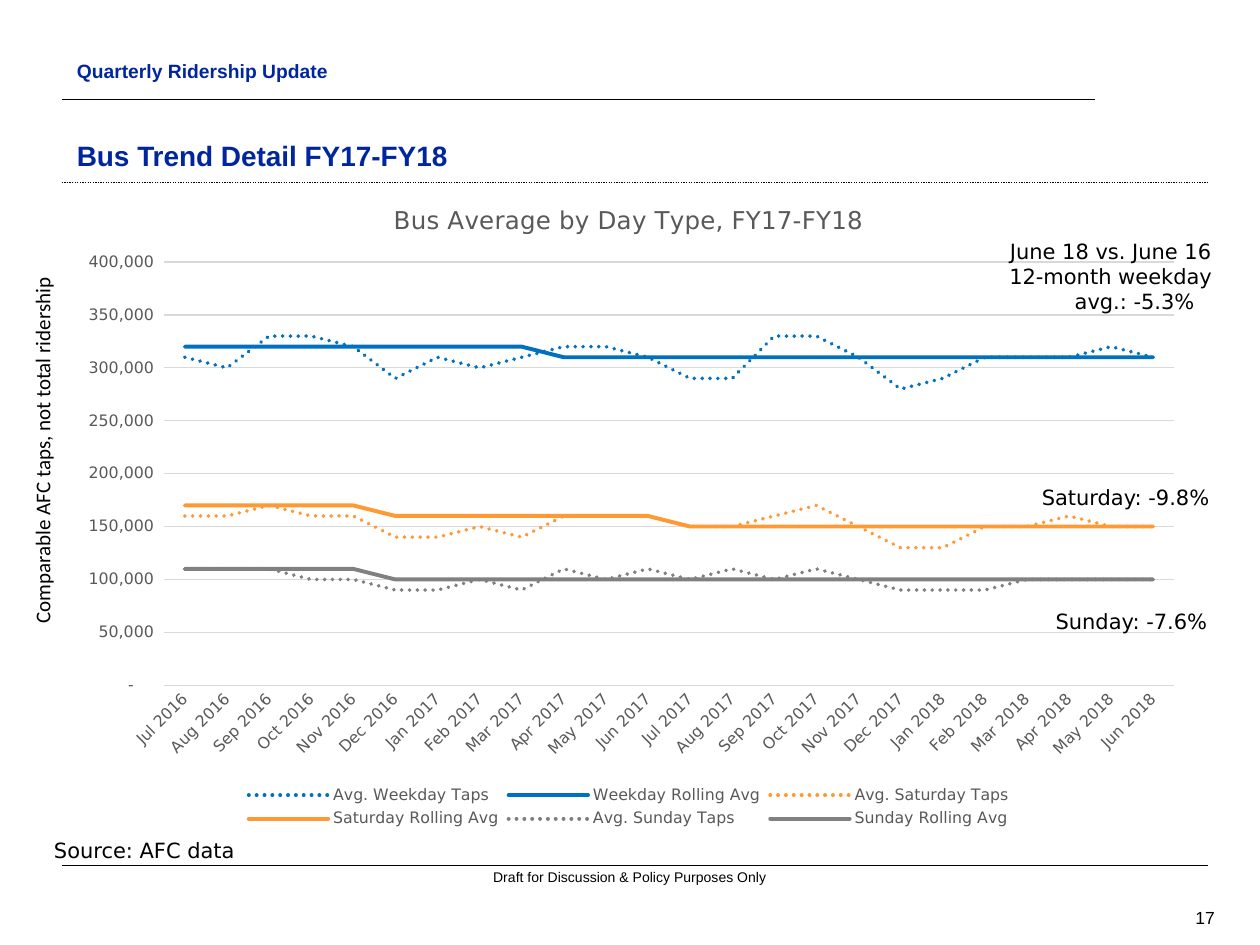
from dataclasses import dataclass

from lxml import etree
from pptx import Presentation
from pptx.chart.data import CategoryChartData
from pptx.dml.color import RGBColor
from pptx.enum.chart import XL_CHART_TYPE, XL_LEGEND_POSITION, XL_TICK_MARK
from pptx.enum.dml import MSO_LINE
from pptx.enum.shapes import MSO_CONNECTOR
from pptx.enum.text import MSO_ANCHOR, PP_ALIGN
from pptx.oxml import parse_xml
from pptx.oxml.ns import nsdecls, qn
from pptx.util import Inches, Pt

LEFT, CENTER, RIGHT = PP_ALIGN.LEFT, PP_ALIGN.CENTER, PP_ALIGN.RIGHT
TOP, MIDDLE, BOTTOM = MSO_ANCHOR.TOP, MSO_ANCHOR.MIDDLE, MSO_ANCHOR.BOTTOM
DOTTED = MSO_LINE.ROUND_DOT
NO_TICK = XL_TICK_MARK.NONE


@dataclass(frozen=True)
class Theme:
    """Colours, fonts and type sizes of the slide."""
    ink: str = "000000"
    navy: str = "00269E"
    muted: str = "595959"
    grid: str = "D9D9D9"
    weekday: str = "0070C0"
    saturday: str = "FF9933"
    sunday: str = "808080"
    heading_font: str = "Arial"
    chart_font: str = "DejaVu Sans"
    side_font: str = "Calibri"
    title: int = 16
    chart_title: int = 14
    note: int = 12
    section: int = 11
    page: int = 10
    axis: int = 9
    footer: int = 8
    trend: float = 2.25
    hairline: float = 0.75


THEME = Theme()
MONTH_NAMES = "Jul Aug Sep Oct Nov Dec Jan Feb Mar Apr May Jun".split()
MONTHS = [f"{month} {year + (place >= 6)}" for year in (2016, 2017)
          for place, month in enumerate(MONTH_NAMES)]
TEN_THOUSANDS_OF_TAPS = (
    ("Avg. Weekday Taps", THEME.weekday, True,
     (31, 30, 33, 33, 32, 29, 31, 30, 31, 32, 32, 31,
      29, 29, 33, 33, 31, 28, 29, 31, 31, 31, 32, 31)),
    ("Weekday Rolling Avg", THEME.weekday, False, [32] * 9 + [31] * 15),
    ("Avg. Saturday Taps", THEME.saturday, True,
     (16, 16, 17, 16, 16, 14, 14, 15, 14, 16, 16, 16,
      15, 15, 16, 17, 15, 13, 13, 15, 15, 16, 15, 15)),
    ("Saturday Rolling Avg", THEME.saturday, False,
     [17] * 5 + [16] * 7 + [15] * 12),
    ("Avg. Sunday Taps", THEME.sunday, True,
     (11, 11, 11, 10, 10, 9, 9, 10, 9, 11, 10, 11,
      10, 11, 10, 11, 10, 9, 9, 9, 10, 10, 10, 10)),
    ("Sunday Rolling Avg", THEME.sunday, False, [11] * 5 + [10] * 19),
)


def style_font(font, size, color, name, bold=False):
    """Set the face, size and colour of a font."""
    font.size, font.name, font.bold = Pt(size), name, bold
    font.color.rgb = RGBColor.from_string(color)


def style_line(line, color, width, dash=None):
    """Set the colour, width and dash of a line."""
    line.color.rgb = RGBColor.from_string(color)
    line.width = Pt(width)
    if dash is not None:
        line.dash_style = dash


def place(shape, box):
    """Move a shape to a box given in inches."""
    shape.left, shape.top, shape.width, shape.height = map(Inches, box)


def add_rule(slide, left, right, y, width, dash=None):
    """Draw a horizontal rule."""
    rule = slide.shapes.add_connector(
        MSO_CONNECTOR.STRAIGHT, Inches(left), Inches(y), Inches(right), Inches(y))
    style_line(rule.line, THEME.ink, width, dash)
    etree.SubElement(rule._element.spPr, qn("a:effectLst"))


def add_label(slide, box, text, size=THEME.note, font=THEME.chart_font,
              align=LEFT, anchor=TOP, wrap=True, hanging=0):
    """Add a text box with one style throughout."""
    label = slide.shapes.add_textbox(*map(Inches, box))
    frame = label.text_frame
    frame.text = text
    frame.word_wrap = wrap
    frame.vertical_anchor = anchor
    for paragraph in frame.paragraphs:
        paragraph.alignment = align
        if hanging:
            properties = paragraph._p.get_or_add_pPr()
            properties.set("marL", str(Inches(hanging)))
            properties.set("indent", str(-Inches(hanging)))
        for run in paragraph.runs:
            style_font(run.font, size, THEME.ink, font)
    return label


def fill_heading(placeholder, box, text, size, anchor):
    """Place and format a heading placeholder."""
    place(placeholder, box)
    frame = placeholder.text_frame
    frame.text = text
    frame.vertical_anchor = anchor
    paragraph = frame.paragraphs[0]
    paragraph.alignment = LEFT
    paragraph.space_before = Pt(0)
    properties = paragraph._p.get_or_add_pPr()
    properties.set("marL", "0")
    properties.set("indent", "0")
    etree.SubElement(properties, qn("a:buNone"))
    style_font(paragraph.runs[0].font, size, THEME.navy, THEME.heading_font, True)


def add_header(slide, left, right):
    """Fill the section name and title with their rules."""
    section = slide.placeholders[1]
    fill_heading(section, (left + 0.02, 0.42, 3.41, 0.25),
                 "Quarterly Ridership Update", THEME.section, TOP)
    fill_heading(slide.shapes.title, (left + 0.02, 0.91, 10.76, 0.51),
                 "Bus Trend Detail FY17-FY18", THEME.title, BOTTOM)
    add_rule(slide, left, right - 0.9, 0.79, 1)
    add_rule(slide, left, right, 1.45, THEME.hairline, DOTTED)


def add_footer(slide, left, right):
    """Add the closing rule, the draft notice and the page number."""
    add_rule(slide, left, right, 6.87, THEME.hairline)
    notice = add_label(slide, (3.57, 6.89, 2.86, 0.13),
                       "Draft for Discussion & Policy Purposes Only",
                       THEME.footer, THEME.heading_font, CENTER)
    frame = notice.text_frame
    frame.margin_left = frame.margin_right = frame.margin_top = frame.margin_bottom = 0
    add_label(slide, (8.91, 7.16, 0.83, 0.25), "17", THEME.page,
              THEME.heading_font, RIGHT, MIDDLE)


def set_plot_area(chart, chart_box, plot_box):
    """Fix the inner plot area, both boxes being in slide inches."""
    left, top, width, height = chart_box
    x, y, w, h = plot_box
    shares = ((x - left) / width, (y - top) / height, w / width, h / height)
    plot_area = chart._chartSpace.chart.plotArea
    for layout in plot_area.findall(qn("c:layout")):
        plot_area.remove(layout)
    sizes = "".join(f'<c:{key} val="{share}"/>' for key, share in zip("xywh", shares))
    plot_area.insert(0, parse_xml(
        f'<c:layout {nsdecls("c")}><c:manualLayout><c:layoutTarget val="inner"/>'
        f'<c:xMode val="edge"/><c:yMode val="edge"/>{sizes}'
        '</c:manualLayout></c:layout>'))


def add_ridership_chart(slide, box):
    """Add the line chart of taps by day type."""
    taps = CategoryChartData(
        number_format='_(* #,##0_);_(* \\(#,##0\\);_(* "-"??_);_(@_)')
    taps.categories = MONTHS
    for name, _, _, values in TEN_THOUSANDS_OF_TAPS:
        taps.add_series(name, [value * 10000 for value in values])
    chart = slide.shapes.add_chart(XL_CHART_TYPE.LINE, *map(Inches, box), taps).chart
    style_font(chart.font, THEME.page, THEME.ink, THEME.chart_font)
    chart.has_title = True
    heading = chart.chart_title.text_frame
    heading.text = "Bus Average by Day Type, FY17-FY18"
    style_font(heading.paragraphs[0].runs[0].font, THEME.chart_title,
               THEME.muted, THEME.chart_font)
    chart.chart_title.include_in_layout = False
    chart.has_legend = True
    chart.legend.position = XL_LEGEND_POSITION.BOTTOM
    chart.legend.include_in_layout = False
    months, counts = chart.category_axis, chart.value_axis
    for part in (months.tick_labels, counts.tick_labels, chart.legend):
        style_font(part.font, THEME.axis, THEME.muted, THEME.chart_font)
    for axis in (months, counts):
        axis.major_tick_mark = axis.minor_tick_mark = NO_TICK
    style_line(months.format.line, THEME.grid, THEME.hairline)
    months._element.find(qn("c:txPr")).find(qn("a:bodyPr")).set("rot", "-2700000")
    counts.minimum_scale, counts.maximum_scale, counts.major_unit = 0, 400000, 50000
    counts.format.line.fill.background()
    style_line(counts.major_gridlines.format.line, THEME.grid, THEME.hairline)
    chart.plots[0].vary_by_categories = False
    for series, (_, color, dotted, _) in zip(chart.plots[0].series,
                                             TEN_THOUSANDS_OF_TAPS):
        series.smooth = False
        style_line(series.format.line, color, THEME.trend, DOTTED if dotted else None)
        series._element.spPr.find(qn("a:ln")).set("cap", "rnd")
    set_plot_area(chart, box, (1.3, 2.08, 8.02, 3.36))


def add_chart_notes(slide):
    """Add the source, the axis caption and the changes by day type."""
    add_label(slide, (0.33, 6.6, 8.99, 0.3), "Source: AFC data")
    caption = add_label(slide, (-1.16, 3.4, 2.99, 0.3),
                        "Comparable AFC taps, not total ridership",
                        font=THEME.side_font, wrap=False, hanging=0.38)
    caption.rotation = 270
    add_label(slide, (8.17, 3.8, 1.83, 0.3), "Saturday: -9.8%", hanging=0.38)
    add_label(slide, (7.69, 1.84, 2.25, 0.71),
              "June 18 vs. June 16\n12-month weekday avg.: -5.3%",
              align=CENTER, hanging=0.38)
    add_label(slide, (8.28, 4.78, 1.6, 0.3), "Sunday: -7.6%", hanging=0.38)


def main():
    """Build and save the slide."""
    deck = Presentation()
    deck.slide_width, deck.slide_height = Inches(10), Inches(7.5)
    slide = deck.slides.add_slide(deck.slide_layouts[1])
    add_header(slide, 0.49, 9.59)
    add_footer(slide, 0.49, 9.59)
    add_ridership_chart(slide, (0.48, 1.42, 9.02, 5.19))
    add_chart_notes(slide)
    deck.save("out.pptx")


if __name__ == "__main__":
    main()
